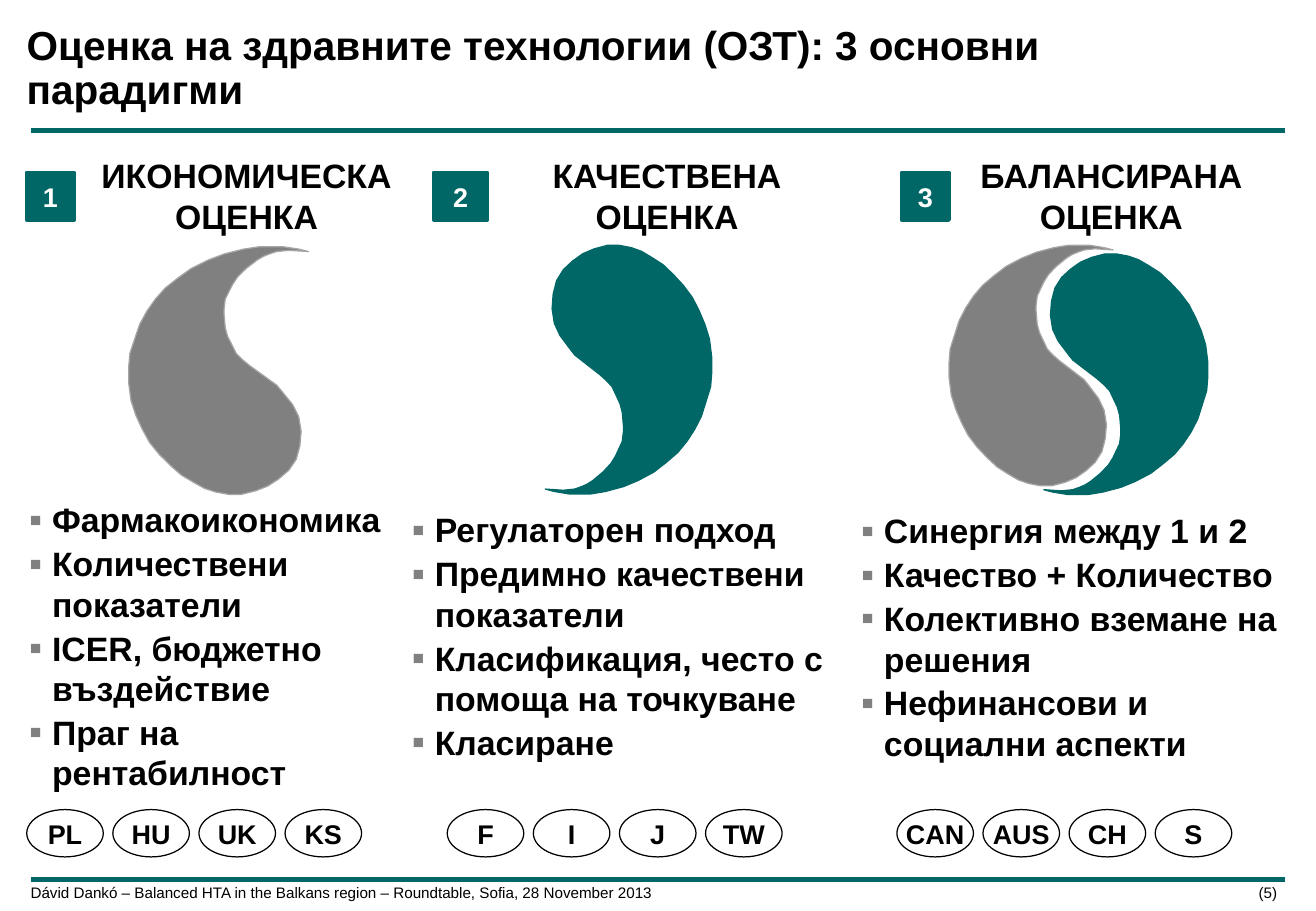
from lxml import etree
from pptx import Presentation
from pptx.dml.color import RGBColor
from pptx.enum.shapes import MSO_CONNECTOR, MSO_SHAPE
from pptx.enum.text import MSO_ANCHOR as Anchor, PP_ALIGN as Align
from pptx.oxml.ns import qn
from pptx.util import Cm, Pt

TEAL, GREY, PALE_GREY = "006666", "808080", "A6A6A6"
BLACK, WHITE = "000000", "FFFFFF"

# Outline of one half of the yin-yang sign
HALF_WIDTH, HALF_HEIGHT = 147, 204
HALF_OUTLINE = [
    (121, 114), (110, 106), (99, 98), (93, 93), (88, 88), (84, 80), (81, 74),
    (79, 67), (78, 56), (78, 51), (79, 43), (82, 37), (85, 31), (89, 25),
    (96, 18), (105, 11), (110, 8), (115, 6), (121, 4), (131, 3), (147, 4),
    (139, 2), (126, 0), (107, 0), (94, 2), (78, 6), (65, 11), (51, 18),
    (40, 26), (30, 34), (22, 43), (15, 53), (9, 64), (5, 76), (1, 88),
    (0, 100), (0, 112), (2, 127), (6, 139), (11, 150), (17, 161), (25, 171),
    (34, 180), (43, 188), (53, 194), (62, 199), (71, 202), (82, 204),
    (92, 204), (104, 201), (114, 197), (123, 191), (131, 184), (137, 175),
    (140, 164), (141, 152), (139, 140), (134, 130), (126, 120),
]

# Boxes are left, top, width, height in centimetres
PARADIGMS = [
    {"badge": (0.56, 3.61, 0.99, 0.99),
     "heading": ("ИКОНОМИЧЕСКА ОЦЕНКА", (1.75, 3.12, 6.81, 1.96)),
     "grey_half": (2.69, 5.16, 3.76, 5.18),
     "points": (["Фармакоикономика", "Количествени показатели",
                 "ICER, бюджетно въздействие", "Праг на рентабилност"],
                (0.36, 10.31, 8.41, 3.78)),
     "countries": (["PL", "HU", "UK", "KS"], 0.56)},
    {"badge": (9.07, 3.61, 1.12, 0.99),
     "heading": ("КАЧЕСТВЕНА ОЦЕНКА", (10.62, 3.12, 6.65, 1.96)),
     "teal_half": (11.4, 5.13, 3.48, 5.2),
     "points": (["Регулаторен подход", "Предимно качествени показатели",
                 "Класификация, често с помоща на точкуване", "Класиране"],
                (8.36, 10.52, 9.6, 3.78)),
     "countries": (["F", "I", "J", "TW"], 9.35)},
    {"badge": (18.85, 3.61, 0.99, 0.99),
     "heading": ("БАЛАНСИРАНА ОЦЕНКА", (20.24, 3.12, 5.99, 1.96)),
     "grey_half": (19.84, 5.13, 3.43, 5.03),
     "teal_half": (21.82, 5.31, 3.43, 5.03),
     "points": (["Синергия между 1 и 2", "Качество + Количество",
                 "Колективно вземане на решения",
                 "Нефинансови и социални аспекти"],
                (17.75, 10.54, 9.55, 3.78)),
     "countries": (["CAN", "AUS", "CH", "S"], 18.75)},
]


def color(value):
    return RGBColor.from_string(value)


def to_cm(box):
    return [Cm(value) for value in box]


def style_runs(paragraph, size, text_color=BLACK, bold=True):
    for run in paragraph.runs:
        run.font.name = "Arial"
        run.font.size = Pt(size)
        run.font.bold = bold
        run.font.color.rgb = color(text_color)


def style_shape(shape, fill, line, line_width):
    shape.shadow.inherit = False
    shape.fill.solid()
    shape.fill.fore_color.rgb = color(fill)
    shape.line.color.rgb = color(line)
    shape.line.width = Pt(line_width)


def add_text(slide, text, box, size, bold=True, align=Align.LEFT):
    shape = slide.shapes.add_textbox(*to_cm(box))
    text_frame = shape.text_frame
    text_frame.word_wrap = True
    text_frame.text = text
    paragraph = text_frame.paragraphs[0]
    paragraph.alignment = align
    style_runs(paragraph, size, bold=bold)
    return text_frame


def set_margins(text_frame, horizontal, vertical):
    text_frame.margin_left = text_frame.margin_right = Cm(horizontal)
    text_frame.margin_top = text_frame.margin_bottom = Cm(vertical)


def add_label(slide, kind, text, box, fill, line, line_width, text_color):
    shape = slide.shapes.add_shape(kind, *to_cm(box))
    style_shape(shape, fill, line, line_width)
    text_frame = shape.text_frame
    text_frame.word_wrap = False
    text_frame.vertical_anchor = Anchor.MIDDLE
    set_margins(text_frame, 0.2, 0.2)
    text_frame.text = text
    paragraph = text_frame.paragraphs[0]
    paragraph.alignment = Align.CENTER
    style_runs(paragraph, 16, text_color)


def add_rule(slide, top):
    line = slide.shapes.add_connector(
        MSO_CONNECTOR.STRAIGHT, Cm(0.64), Cm(top), Cm(26.87), Cm(top))
    line.line.color.rgb = color(TEAL)
    line.line.width = Pt(3)
    etree.SubElement(line._element.spPr, qn("a:effectLst"))


def add_half(slide, box, fill, line, turned=False):
    left, top, width, height = to_cm(box)
    outline = HALF_OUTLINE
    if turned:
        outline = [(HALF_WIDTH - x, HALF_HEIGHT - y) for x, y in outline]
    builder = slide.shapes.build_freeform(
        *outline[0], scale=(width / HALF_WIDTH, height / HALF_HEIGHT))
    builder.add_line_segments(outline[1:], close=True)
    style_shape(builder.convert_to_shape(left, top), fill, line, 0.75)


def add_bullet(paragraph):
    properties = paragraph._p.get_or_add_pPr()
    properties.set("marL", str(Cm(0.48)))
    properties.set("indent", str(-Cm(0.48)))
    bullet_color = etree.SubElement(properties, qn("a:buClr"))
    etree.SubElement(bullet_color, qn("a:srgbClr"), val=GREY)
    etree.SubElement(properties, qn("a:buSzPct"), val="110000")
    etree.SubElement(properties, qn("a:buFont"), typeface="Arial")
    etree.SubElement(properties, qn("a:buChar"), char="▪")


def add_points(slide, points, box):
    text_frame = add_text(slide, "\n".join(points), box, 20)
    for index, paragraph in enumerate(text_frame.paragraphs):
        add_bullet(paragraph)
        if index:
            paragraph.space_before = Pt(2)
        style_runs(paragraph, 20)


def add_countries(slide, codes, left):
    for index, code in enumerate(codes):
        add_label(slide, MSO_SHAPE.OVAL, code,
                  (left + 1.8 * index, 16.93, 1.6, 0.99),
                  WHITE, BLACK, 0.75, BLACK)


def add_title(slide):
    text_frame = add_text(
        slide, "Оценка на здравните технологии (ОЗТ): 3 основни парадигми",
        (0.56, 0.13, 24, 2.34), 24)
    set_margins(text_frame, 0, 0.1)
    text_frame.vertical_anchor = Anchor.BOTTOM
    text_frame.paragraphs[0].line_spacing = 0.9


def add_footer(slide):
    text_frame = add_text(
        slide, "Dávid Dankó – Balanced HTA in the Balkans region – "
        "Roundtable, Sofia, 28 November 2013\t(5)",
        (0.64, 18.52, 26.31, 0.36), 9, bold=False)
    set_margins(text_frame, 0, 0)
    paragraph = text_frame.paragraphs[0]
    paragraph.line_spacing = 0.9
    tabs = etree.SubElement(paragraph._p.get_or_add_pPr(), qn("a:tabLst"))
    etree.SubElement(tabs, qn("a:tab"), pos=str(Cm(26.06)), algn="r")


def add_paradigm(slide, number, paradigm):
    add_label(slide, MSO_SHAPE.RECTANGLE, str(number), paradigm["badge"],
              TEAL, TEAL, 2.25, WHITE)
    heading, heading_box = paradigm["heading"]
    add_text(slide, heading, heading_box, 20, align=Align.CENTER)
    if "grey_half" in paradigm:
        add_half(slide, paradigm["grey_half"], GREY, PALE_GREY)
    if "teal_half" in paradigm:
        add_half(slide, paradigm["teal_half"], TEAL, TEAL, turned=True)
    add_points(slide, *paradigm["points"])
    add_countries(slide, *paradigm["countries"])


def main():
    presentation = Presentation()
    presentation.slide_width, presentation.slide_height = Cm(27.51), Cm(19.05)
    slide = presentation.slides.add_slide(presentation.slide_layouts[6])

    # Frame: title, rules and footer
    add_title(slide)
    for top in (2.72, 18.39):
        add_rule(slide, top)
    add_footer(slide)

    # Three paradigms
    for number, paradigm in enumerate(PARADIGMS, start=1):
        add_paradigm(slide, number, paradigm)

    presentation.save("out.pptx")


if __name__ == "__main__":
    main()
